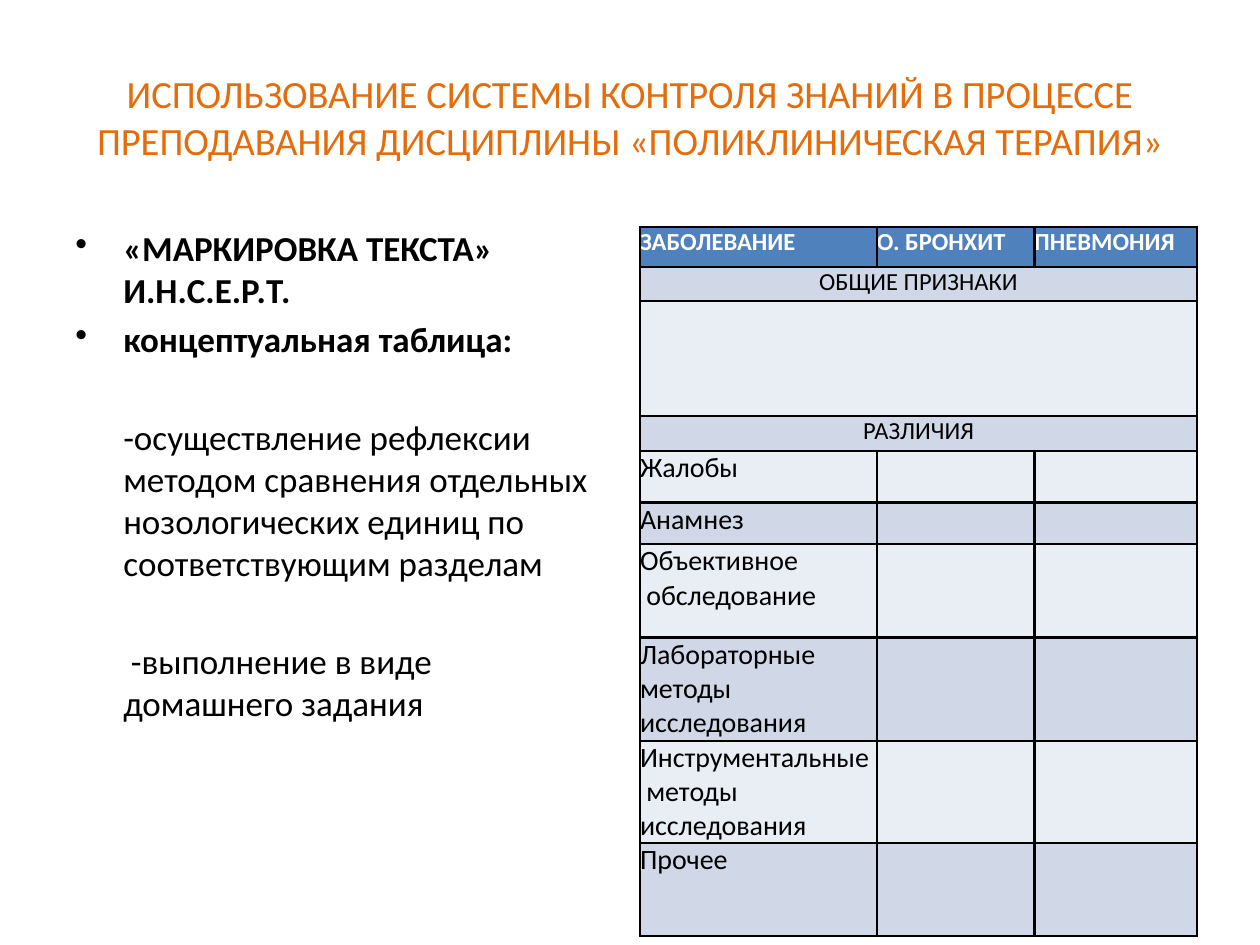
from dataclasses import dataclass

from lxml.etree import SubElement
from pptx import Presentation
from pptx.dml.color import RGBColor
from pptx.enum.text import MSO_ANCHOR, PP_ALIGN
from pptx.oxml.ns import qn
from pptx.util import Inches, Pt


@dataclass(frozen=True)
class Theme:
    """Colours and type sizes of the slide."""
    font: str = "Calibri"
    accent: str = "E46C0A"
    text: str = "000000"
    header_text: str = "FFFFFF"
    header: str = "4F81BD"
    bands: tuple = ("E9EDF4", "D0D8E8")
    title: int = 22
    body: int = 20
    head: int = 14
    label: int = 16
    border: float = 1.5


THEME = Theme()
TITLE = ("ИСПОЛЬЗОВАНИЕ СИСТЕМЫ КОНТРОЛЯ ЗНАНИЙ В ПРОЦЕССЕ "
         "ПРЕПОДАВАНИЯ ДИСЦИПЛИНЫ «ПОЛИКЛИНИЧЕСКАЯ ТЕРАПИЯ»")
BULLETS = ("«МАРКИРОВКА ТЕКСТА» И.Н.С.Е.Р.Т.", "концептуальная таблица:")
NOTES = (
    ("-осуществление рефлексии методом сравнения отдельных "
     "нозологических единиц по соответствующим разделам", 0),
    ("-выполнение в виде домашнего задания", 0.06),
)
COLUMNS = (1.88, 1.25, 1.29)
HEADER = ("ЗАБОЛЕВАНИЕ", "О. БРОНХИТ", "ПНЕВМОНИЯ")
SECTIONS = (("ОБЩИЕ ПРИЗНАКИ", 0.27), ("", 0.91), ("РАЗЛИЧИЯ", 0.28))
LABELS = (
    ("Жалобы", 0.41),
    ("Анамнез", 0.33),
    ("Объективное\n обследование", 0.74),
    ("Лабораторные методы исследования", 0.82),
    ("Инструментальные\n методы исследования", 0.81),
    ("Прочее", 0.74),
)


def style(p, size, color, bold=False, align=PP_ALIGN.LEFT):
    """Format a whole paragraph."""
    p.alignment = align
    p.font.name, p.font.size, p.font.bold = THEME.font, Pt(size), bold
    p.font.color.rgb = RGBColor.from_string(color)


def indent(p, left, first):
    """Set the left margin and the first-line indent."""
    pPr = p._p.get_or_add_pPr()
    pPr.set("marL", str(Inches(left)))
    pPr.set("indent", str(Inches(first)))
    return pPr


def add_title(s):
    """Fill and place the title."""
    sp = s.shapes.title
    sp.left, sp.top, sp.width, sp.height = map(Inches, (0.5, 0.3, 9, 1.25))
    tf = sp.text_frame
    tf.text, tf.vertical_anchor = TITLE, MSO_ANCHOR.MIDDLE
    style(tf.paragraphs[0], THEME.title, THEME.accent, align=PP_ALIGN.CENTER)


def add_body(s):
    """Add the bullets and the notes under them."""
    tf = s.shapes.add_textbox(*map(Inches, (0.5, 1.75, 4.42, 4.95))).text_frame
    tf.word_wrap = True
    tf.text = "\n".join([*BULLETS, *(text for text, _ in NOTES)])
    bullets, notes = tf.paragraphs[:len(BULLETS)], tf.paragraphs[len(BULLETS):]
    for p in bullets:
        style(p, THEME.body, THEME.text, bold=True)
        p.space_before = Pt(4)
        pPr = indent(p, 0.38, -0.38)
        bullet = pPr.makeelement(qn("a:buChar"), {"char": "•"})
        pPr.insert_element_before(bullet, "a:tabLst", "a:defRPr", "a:extLst")
    for p, (_, first) in zip(notes, NOTES):
        style(p, THEME.body, THEME.text)
        p.space_before = Pt(32)
        indent(p, 0.38, first)


def format_cell(cell, text, fill, size, color, bold=False, align=PP_ALIGN.LEFT):
    """Give a cell its text, borders and fill."""
    cell.margin_left = cell.margin_right = cell.margin_top = cell.margin_bottom = 0
    cell.text = text
    for p in cell.text_frame.paragraphs:
        style(p, size, color, bold, align)
    tcPr = cell._tc.get_or_add_tcPr()
    for side in ("lnL", "lnR", "lnT", "lnB"):
        ln = SubElement(tcPr, qn(f"a:{side}"), w=str(Pt(THEME.border)))
        SubElement(SubElement(ln, qn("a:solidFill")), qn("a:srgbClr"), val=THEME.text)
    cell.fill.solid()
    cell.fill.fore_color.rgb = RGBColor.from_string(fill)


def add_comparison(s):
    """Add the table that compares the two diseases."""
    heights = [0.32, *(h for _, h in SECTIONS + LABELS)]
    table = s.shapes.add_table(
        len(heights), len(COLUMNS), Inches(5.08), Inches(1.8),
        Inches(sum(COLUMNS)), Inches(sum(heights))).table
    for col, width in zip(table.columns, COLUMNS):
        col.width = Inches(width)
    for row, height in zip(table.rows, heights):
        row.height = Inches(height)
    for c, text in enumerate(HEADER):
        format_cell(table.cell(0, c), text, THEME.header,
                    THEME.head, THEME.header_text, bold=True)
    for r, (text, _) in enumerate(SECTIONS + LABELS, 1):
        section = r <= len(SECTIONS)
        size = THEME.head if section else THEME.label
        align = PP_ALIGN.CENTER if section else PP_ALIGN.LEFT
        for c in range(len(COLUMNS)):
            format_cell(table.cell(r, c), "" if c else text, THEME.bands[r % 2],
                        size, THEME.text, align=align)
        if section:
            table.cell(r, 0).merge(table.cell(r, len(COLUMNS) - 1))


def main():
    """Build and save the slide."""
    prs = Presentation()
    prs.slide_width, prs.slide_height = Inches(10), Inches(7.5)
    s = prs.slides.add_slide(prs.slide_layouts[5])
    add_title(s)
    add_body(s)
    add_comparison(s)
    prs.save("out.pptx")


if __name__ == "__main__":
    main()
